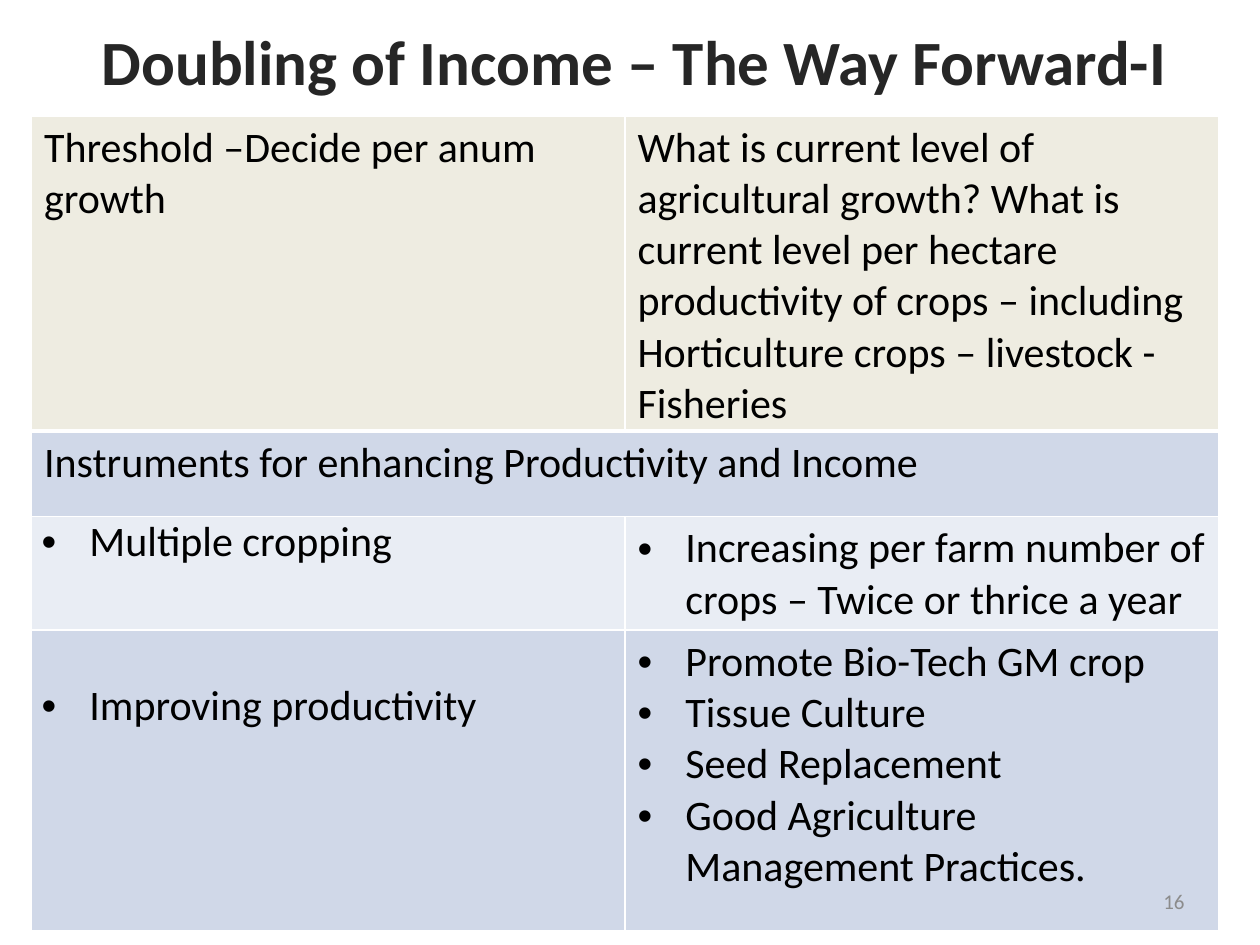
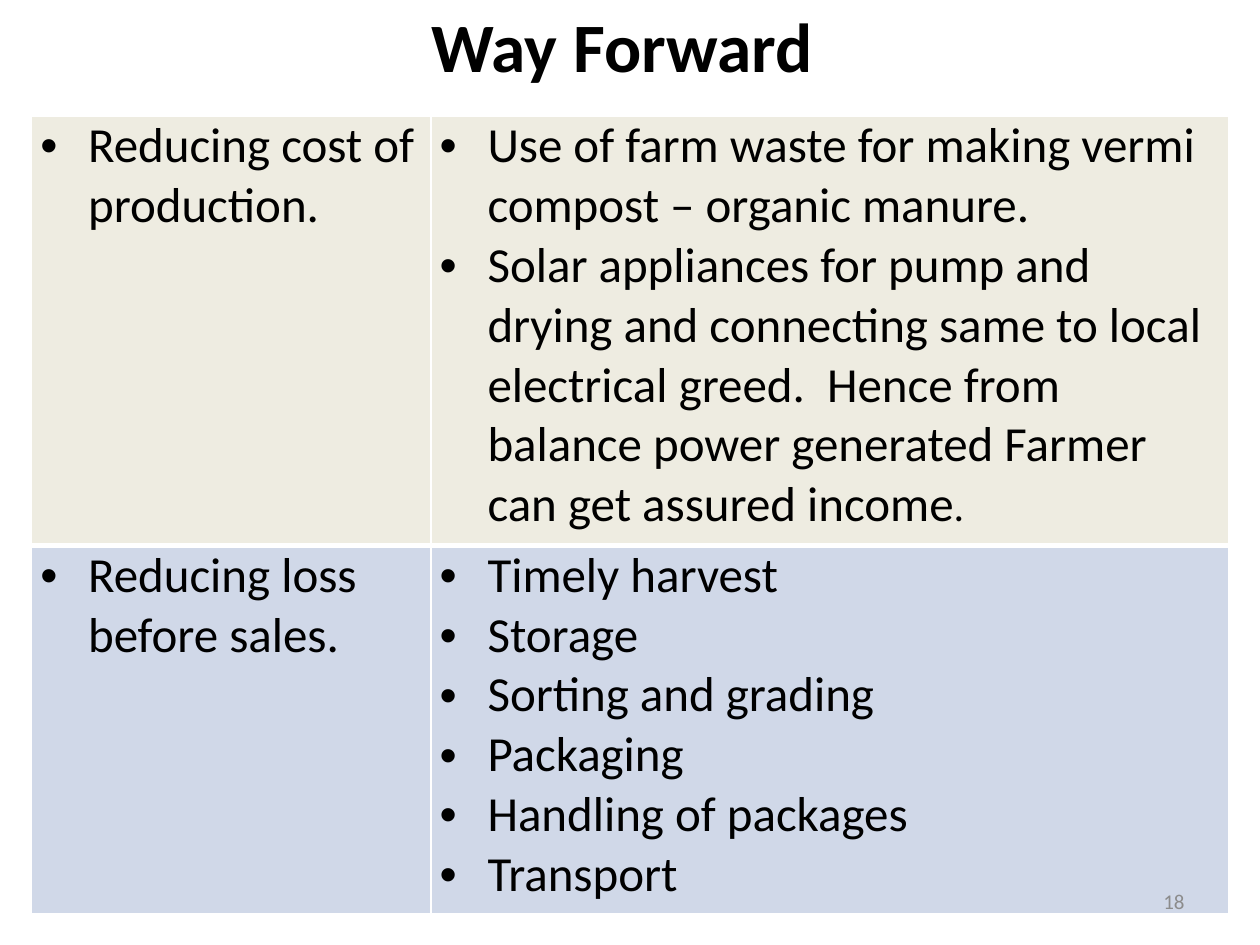
from dataclasses import dataclass

from lxml.etree import SubElement
from pptx import Presentation
from pptx.dml.color import RGBColor
from pptx.enum.text import MSO_ANCHOR, PP_ALIGN
from pptx.oxml.ns import qn
from pptx.util import Inches, Pt


@dataclass(frozen=True)
class Theme:
    font: str = "Calibri"
    black: str = "000000"
    charcoal: str = "262626"
    grey: str = "8C8C8C"
    white: str = "FFFFFF"
    cream: str = "EEECE1"
    blue: str = "D0D8E8"
    pale_blue: str = "E9EDF4"
    number_size: float = 12
    thin_line: float = 1
    thick_line: float = 3
    bullet_indent: float = 0.38


THEME = Theme()
# Cell margins: side, top and bottom
ROOMY = (0.1, 0.05)
TIGHT = (0.08, 0)
NARROW = (0.07, 0)


@dataclass
class CellText:
    lines: list
    margins: tuple = ROOMY
    bulleted: bool = True
    alignment: PP_ALIGN = PP_ALIGN.LEFT
    space_above: float = 0


def format_run(run, size, color=THEME.black, bold=False):
    run.font.name = THEME.font
    run.font.size = Pt(size)
    run.font.bold = bold
    run.font.color.rgb = RGBColor.from_string(color)


def add_text(slide, text, box, size, color, alignment, bold=False):
    shape = slide.shapes.add_textbox(*(Inches(length) for length in box))
    frame = shape.text_frame
    frame.word_wrap = True
    frame.vertical_anchor = MSO_ANCHOR.MIDDLE
    frame.text = text
    paragraph = frame.paragraphs[0]
    paragraph.alignment = alignment
    format_run(paragraph.runs[0], size, color, bold)


def add_title(slide, text, box, size, color):
    add_text(slide, text, box, size, color, PP_ALIGN.CENTER, bold=True)


def add_slide_number(slide, number):
    add_text(slide, str(number), (7.17, 6.95, 2.33, 0.4),
             THEME.number_size, THEME.grey, PP_ALIGN.RIGHT)


def add_bullet(paragraph):
    properties = paragraph._p.get_or_add_pPr()
    indent = Inches(THEME.bullet_indent)
    properties.set("marL", str(indent))
    properties.set("indent", str(-indent))
    SubElement(properties, qn("a:buFont")).set("typeface", "Arial")
    SubElement(properties, qn("a:buChar")).set("char", "•")


def set_borders(cell, bottom_width):
    properties = cell._tc.get_or_add_tcPr()
    widths = {"lnL": THEME.thin_line, "lnR": THEME.thin_line,
              "lnT": THEME.thin_line, "lnB": bottom_width}
    for side, width in widths.items():
        line = SubElement(properties, qn(f"a:{side}"), w=str(Pt(width)))
        fill = SubElement(line, qn("a:solidFill"))
        SubElement(fill, qn("a:srgbClr"), val=THEME.white)


def fill_cell(cell, content, size):
    side, edge = content.margins
    cell.margin_left = cell.margin_right = Inches(side)
    cell.margin_top = Inches(edge + content.space_above)
    cell.margin_bottom = Inches(edge)
    frame = cell.text_frame
    for index, line in enumerate(content.lines):
        paragraph = frame.add_paragraph() if index else frame.paragraphs[0]
        paragraph.text = line
        paragraph.alignment = content.alignment
        format_run(paragraph.runs[0], size)
        if content.bulleted:
            add_bullet(paragraph)


def add_table(slide, column_widths, row_heights, row_colors, rows, size):
    """Build a table; a row with one cell spans all columns."""
    frame = slide.shapes.add_table(
        len(rows), len(column_widths), Inches(0.25), Inches(0.92),
        Inches(sum(column_widths)), Inches(sum(row_heights)))
    table = frame.table
    table.first_row = table.horz_banding = False
    for column, width in zip(table.columns, column_widths):
        column.width = Inches(width)
    for row_index, (contents, color) in enumerate(zip(rows, row_colors)):
        row = table.rows[row_index]
        row.height = Inches(row_heights[row_index])
        for cell in row.cells:
            set_borders(cell, THEME.thin_line if row_index else THEME.thick_line)
            cell.fill.solid()
            cell.fill.fore_color.rgb = RGBColor.from_string(color)
        if len(contents) == 1:
            row.cells[0].merge(row.cells[len(column_widths) - 1])
        for cell, content in zip(row.cells, contents):
            fill_cell(cell, content, size)
    return table


def build_productivity_slide(slide):
    add_title(slide, "Doubling of Income – The Way Forward-I",
              (0.23, 0.02, 9.61, 0.92), 36, THEME.charcoal)
    rows = [
        [CellText(["Threshold –Decide per anum growth"], bulleted=False),
         CellText(["What is current level of agricultural growth? What is "
                   "current level per hectare productivity of crops – including "
                   "Horticulture crops – livestock - Fisheries"], bulleted=False)],
        [CellText(["Instruments for enhancing Productivity and Income"],
                  bulleted=False)],
        [CellText(["Multiple cropping"], TIGHT),
         CellText(["Increasing per farm number of crops – Twice or thrice a year"])],
        [CellText(["Improving productivity"], TIGHT, space_above=0.4),
         CellText(["Promote Bio-Tech GM crop", "Tissue Culture", "Seed Replacement",
                   "Good Agriculture Management Practices."])],
    ]
    colors = [THEME.cream, THEME.blue, THEME.pale_blue, THEME.blue]
    add_table(slide, [4.71, 4.71], [2.4, 0.68, 0.86, 2.39], colors, rows, 24)
    add_slide_number(slide, 16)


def build_cost_and_loss_slide(slide):
    add_title(slide, "Way Forward ", (0.5, 0.02, 9, 0.67), 39.6, THEME.black)
    solar_text = ("Solar appliances for pump and drying and connecting same to local "
                  "electrical greed.  Hence from balance power generated Farmer can "
                  "get assured income")
    rows = [
        [CellText(["Reducing cost of production."], NARROW),
         CellText(["Use of farm waste for making vermi compost – organic manure.",
                   solar_text], NARROW)],
        [CellText(["Reducing loss before sales."], NARROW),
         CellText(["Timely harvest", "Storage", "Sorting and grading", "Packaging",
                   "Handling of packages", "Transport"], NARROW,
                  alignment=PP_ALIGN.JUSTIFY)],
    ]
    table = add_table(slide, [3.17, 6.33], [3.41, 2.92],
                      [THEME.cream, THEME.blue], rows, 28)
    # The closing full stop is set smaller than its sentence
    full_stop = table.cell(0, 1).text_frame.paragraphs[-1].add_run()
    full_stop.text = "."
    format_run(full_stop, 24)
    add_slide_number(slide, 18)


def main():
    presentation = Presentation()
    presentation.slide_width = Inches(10)
    presentation.slide_height = Inches(7.5)
    blank_layout = presentation.slide_layouts[6]
    for build_slide in (build_productivity_slide, build_cost_and_loss_slide):
        build_slide(presentation.slides.add_slide(blank_layout))
    presentation.save("out.pptx")


if __name__ == "__main__":
    main()
